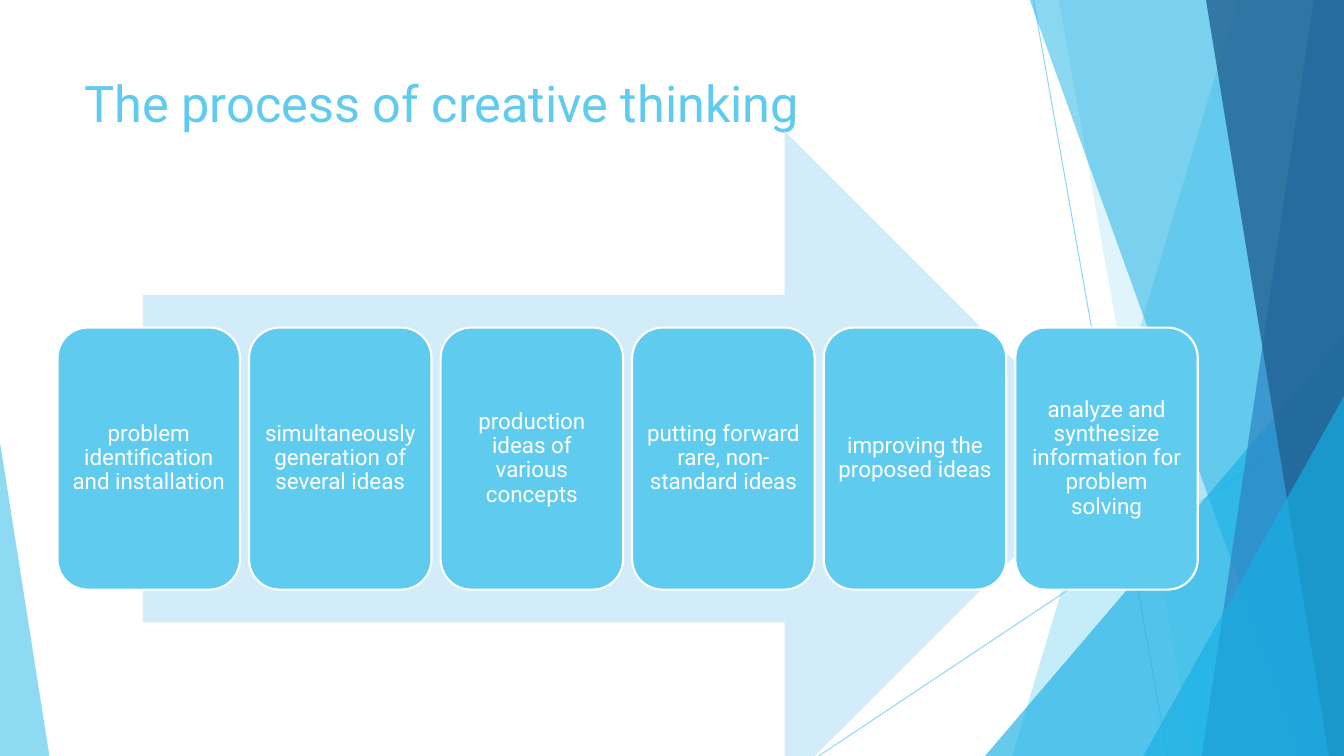
from lxml import etree
from pptx import Presentation
from pptx.dml.color import RGBColor
from pptx.enum.shapes import MSO_CONNECTOR, MSO_SHAPE
from pptx.enum.text import MSO_ANCHOR, PP_ALIGN
from pptx.oxml.ns import qn
from pptx.util import Inches, Pt

SKY = RGBColor(0x5F, 0xCB, 0xEF)
CYAN = RGBColor(0x17, 0xB0, 0xE4)
BLUE = RGBColor(0x2E, 0x83, 0xC3)
NAVY = RGBColor(0x22, 0x62, 0x92)
PALE = RGBColor(0xD2, 0xEC, 0xF9)
WHITE = RGBColor(0xFF, 0xFF, 0xFF)
FONT = "Roboto"
WIDTH, HEIGHT = 13.33, 7.5
STEPS = [
    "problem identification and installation",
    "simultaneously generation of several ideas",
    "production ideas of various concepts",
    "putting forward rare, non-standard ideas",
    "improving the proposed ideas",
    "analyze and synthesize information for problem solving",
]


def set_alpha(parent, percent):
    """Make the solid colour found under an XML element translucent."""
    color = next(parent.iter(qn("a:srgbClr")))
    etree.SubElement(color, qn("a:alpha")).set("val", str(percent * 1000))


def paint(sp, color, alpha=None):
    """Give a shape a flat fill without line or shadow."""
    sp.shadow.inherit = False
    sp.fill.solid()
    sp.fill.fore_color.rgb = color
    sp.line.fill.background()
    if alpha is not None:
        set_alpha(sp.fill._xPr, alpha)


def style_run(r, size, color):
    """Set the font of a run."""
    r.font.name = FONT
    r.font.size = Pt(size)
    r.font.color.rgb = color


def add_ray(slide, x1, y1, x2, y2):
    """Draw a thin translucent line."""
    ray = slide.shapes.add_connector(
        MSO_CONNECTOR.STRAIGHT, Inches(x1), Inches(y1), Inches(x2), Inches(y2))
    ray.line.color.rgb = SKY
    ray.line.width = Pt(0.75)
    sp_pr = ray._element.spPr
    set_alpha(sp_pr, 70)
    etree.SubElement(sp_pr, qn("a:effectLst"))


def add_band(slide, top_x, bottom_x, color, alpha):
    """Fill the area from a slanted edge to the right side of the slide."""
    top = Inches(-0.01)
    right, bottom = Inches(WIDTH), Inches(HEIGHT)
    builder = slide.shapes.build_freeform(Inches(top_x), top)
    builder.add_line_segments(
        [(right, top), (right, bottom), (Inches(bottom_x), bottom)], close=True)
    paint(builder.convert_to_shape(), color, alpha)


def add_corner(slide, x, width, height, apex, color, alpha):
    """Stand a right triangle on the bottom edge of the slide."""
    sp = slide.shapes.add_shape(
        MSO_SHAPE.ISOSCELES_TRIANGLE, Inches(x), Inches(HEIGHT - height),
        Inches(width), Inches(height))
    sp.adjustments[0] = apex
    paint(sp, color, alpha)


def add_facets(slide):
    """Draw the translucent facets at the slide's sides."""
    add_ray(slide, 10.25, 0, 11.58, HEIGHT)
    add_ray(slide, WIDTH, 4.03, 8.12, HEIGHT)
    add_band(slide, 12.28, 10.04, SKY, 36)
    add_band(slide, 10.5, 11.83, SKY, 20)
    add_corner(slide, 9.77, 3.56, 4.17, 1, CYAN, 66)
    add_band(slide, 10.21, 12.91, CYAN, 50)
    add_band(slide, 13.03, 11.92, BLUE, 70)
    add_band(slide, 11.96, 13.18, NAVY, 80)
    add_corner(slide, 11.34, 1.99, 3.57, 1, CYAN, 66)
    add_corner(slide, 0, 0.49, 3.11, 0, SKY, 70)


def add_title(slide, x, y, width, height, text):
    """Fill and place the title placeholder."""
    title = slide.shapes.title
    title.left, title.top = Inches(x), Inches(y)
    title.width, title.height = Inches(width), Inches(height)
    tf = title.text_frame
    tf.word_wrap = True
    tf.vertical_anchor = MSO_ANCHOR.TOP
    p = tf.paragraphs[0]
    p.alignment = PP_ALIGN.LEFT
    r = p.add_run()
    r.text = text
    style_run(r, 36, SKY)


def add_step(slide, x, y, width, height, text):
    """Draw one step card with centred text."""
    sp = slide.shapes.add_shape(
        MSO_SHAPE.ROUNDED_RECTANGLE, Inches(x), Inches(y),
        Inches(width), Inches(height))
    paint(sp, SKY)
    sp.line.color.rgb = WHITE
    sp.line.width = Pt(1.5)
    tf = sp.text_frame
    tf.word_wrap = True
    tf.vertical_anchor = MSO_ANCHOR.MIDDLE
    tf.margin_left = tf.margin_right = Inches(0.05)
    tf.margin_top = tf.margin_bottom = Inches(0.07)
    p = tf.paragraphs[0]
    p.alignment = PP_ALIGN.CENTER
    p.line_spacing = 0.9
    p.space_after = Pt(5.6)
    r = p.add_run()
    r.text = text
    style_run(r, 16, WHITE)


def add_process(slide, x, y, width, height):
    """Lay a row of step cards over a wide arrow."""
    arrow_width = width * 0.85
    arrow = slide.shapes.add_shape(
        MSO_SHAPE.RIGHT_ARROW, Inches(x + (width - arrow_width) / 2), Inches(y),
        Inches(arrow_width), Inches(height))
    paint(arrow, PALE)
    card_width, card_height = 1.81, height * 0.4
    pitch = (width - card_width) / (len(STEPS) - 1)
    for i, text in enumerate(STEPS):
        add_step(slide, x + i * pitch, y + (height - card_height) / 2,
                 card_width, card_height, text)


def main():
    """Build and save the slide."""
    prs = Presentation()
    prs.slide_width, prs.slide_height = Inches(WIDTH), Inches(HEIGHT)
    slide = prs.slides.add_slide(prs.slide_layouts[5])
    add_facets(slide)
    add_title(slide, 0.74, 0.67, 9.4, 1.44, "The process of creative thinking")
    add_process(slide, 0.57, 1.3, 11.31, 6.5)
    prs.save("out.pptx")


if __name__ == "__main__":
    main()
